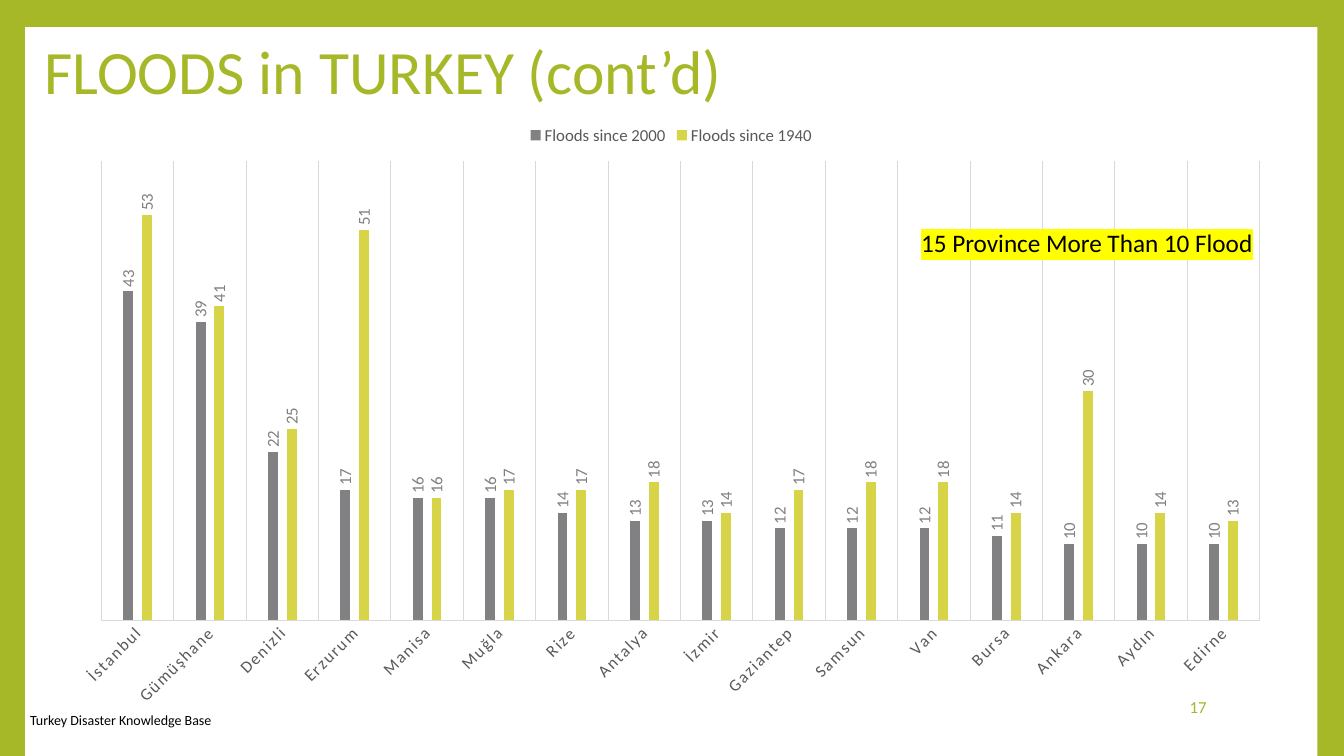
"""Build the slide on floods in Turkish provinces, with a clustered column chart."""
from lxml.etree import SubElement
from pptx import Presentation
from pptx.chart.data import CategoryChartData
from pptx.dml.color import RGBColor
from pptx.enum.chart import XL_CHART_TYPE as ChartType, XL_LABEL_POSITION as LabelPos
from pptx.enum.chart import XL_LEGEND_POSITION as LegendPos, XL_TICK_MARK as TickMark
from pptx.enum.shapes import MSO_SHAPE as Shape
from pptx.enum.text import MSO_ANCHOR as Anchor, PP_ALIGN as Align
from pptx.oxml.ns import qn
from pptx.util import Pt

GREEN = RGBColor(0xA6, 0xB7, 0x27)
WHITE = RGBColor(0xFF, 0xFF, 0xFF)
BLACK = RGBColor(0, 0, 0)
DARK_GREY = RGBColor(0x59, 0x59, 0x59)
LABEL_GREY = RGBColor(0x80, 0x80, 0x80)
LINE_GREY = RGBColor(0xD9, 0xD9, 0xD9)
BAR_GREY = RGBColor(0x81, 0x81, 0x83)
BAR_YELLOW = RGBColor(0xD7, 0xD4, 0x47)
HIGHLIGHT = RGBColor(0xFF, 0xFF, 0x00)

PROVINCES = ["İstanbul", "Gümüşhane", "Denizli", "Erzurum", "Manisa", "Muğla",
             "Rize", "Antalya", "İzmir", "Gaziantep", "Samsun", "Van", "Bursa",
             "Ankara", "Aydın", "Edirne"]
FLOODS = {
    "Floods since 2000": (
        BAR_GREY, [43, 39, 22, 17, 16, 16, 14, 13, 13, 12, 12, 12, 11, 10, 10, 10]),
    "Floods since 1940": (
        BAR_YELLOW, [53, 41, 25, 51, 16, 17, 17, 18, 14, 17, 18, 18, 14, 30, 14, 13]),
}


def style_font(font, size, color):
    font.name, font.size, font.color.rgb = "Calibri", Pt(size), color


def write(box, text, size, color, **frame_format):
    frame = box.text_frame
    for name, value in frame_format.items():
        setattr(frame, name, value)
    paragraph = frame.paragraphs[0]
    run = paragraph.add_run()
    run.text = text
    style_font(run.font, size, color)
    return paragraph


prs = Presentation()
prs.slide_width, prs.slide_height = Pt(960), Pt(540)
slide = prs.slides.add_slide(prs.slide_layouts[5])
slide.background.fill.solid()
slide.background.fill.fore_color.rgb = GREEN

panel = slide.shapes.add_shape(Shape.RECTANGLE, Pt(18), Pt(19.4), Pt(923), Pt(521.3 - 19.4 + 19.4))
panel.shadow.inherit = False
panel.fill.solid()
panel.fill.fore_color.rgb = WHITE
panel.line.fill.background()
slide.shapes._spTree.insert(2, panel._element)

title = slide.shapes.title
title.left, title.top, title.width, title.height = Pt(24.5), Pt(0), Pt(777.6), Pt(106.6)
heading = write(title, "FLOODS in TURKEY (cont’d)", 44, GREEN,
                vertical_anchor=Anchor.MIDDLE, word_wrap=True)
heading.alignment, heading.line_spacing = Align.LEFT, 0.9

page = slide.shapes.add_textbox(Pt(734.4), Pt(490.3), Pt(134.6), Pt(28.8))
write(page, "17", 12, GREEN, vertical_anchor=Anchor.MIDDLE,
      word_wrap=True).alignment = Align.RIGHT

flood_data = CategoryChartData()
flood_data.categories = PROVINCES
for name, (color, counts) in FLOODS.items():
    flood_data.add_series(name, counts)
chart = slide.shapes.add_chart(ChartType.COLUMN_CLUSTERED, Pt(41.8), Pt(81.4),
                               Pt(875.5), Pt(432), flood_data).chart
style_font(chart.font, 10, BLACK)
chart.has_title = False
chart.has_legend = True
chart.legend.position = LegendPos.TOP
chart.legend.include_in_layout = False
style_font(chart.legend.font, 12, DARK_GREY)

plot = chart.plots[0]
plot.gap_width, plot.overlap, plot.vary_by_categories = 444, -90, False
for series, (color, counts) in zip(plot.series, FLOODS.values()):
    series.format.fill.solid()
    series.format.fill.fore_color.rgb = color
    labels = series.data_labels
    labels.show_value, labels.position = True, LabelPos.OUTSIDE_END
    style_font(labels.font, 12, LABEL_GREY)
    labels._element.xpath("c:txPr/a:bodyPr")[0].set("rot", "-5400000")

provinces = chart.category_axis
provinces.major_tick_mark = provinces.minor_tick_mark = TickMark.NONE
provinces.has_major_gridlines = True
for line in (provinces.format.line, provinces.major_gridlines.format.line):
    line.color.rgb, line.width = LINE_GREY, Pt(0.75)
style_font(provinces.tick_labels.font, 12, DARK_GREY)
provinces._element.xpath("c:txPr/a:bodyPr")[0].set("rot", "-2700000")
provinces._element.xpath("c:txPr//a:defRPr")[0].set("spc", "120")

counts_axis = chart.value_axis
counts_axis.minimum_scale, counts_axis.maximum_scale = 0, 60
counts_axis.has_major_gridlines = counts_axis.visible = False

plot_area = chart._chartSpace.xpath("c:chart/c:plotArea")[0]
for old_layout in plot_area.findall(qn("c:layout")):
    plot_area.remove(old_layout)
layout = SubElement(plot_area, qn("c:layout"))
plot_area.insert(0, layout)
manual = SubElement(layout, qn("c:manualLayout"))
for tag, value in {"layoutTarget": "inner", "xMode": "edge", "yMode": "edge",
                   "x": 0.035, "y": 0.078, "w": 0.945, "h": 0.759}.items():
    SubElement(manual, qn(f"c:{tag}")).set("val", str(value))

source = slide.shapes.add_textbox(Pt(14.4), Pt(504.7), Pt(258.5), Pt(19.4))
write(source, "Turkey Disaster Knowledge Base", 10, BLACK, word_wrap=True)

callout = slide.shapes.add_textbox(Pt(650.9), Pt(159.1), Pt(252), Pt(28.8))
remark = write(callout, "15 Province More Than 10 Flood", 18, BLACK, word_wrap=False)
run_format = remark.runs[0].font._element
highlight = SubElement(run_format, qn("a:highlight"))
SubElement(highlight, qn("a:srgbClr")).set("val", str(HIGHLIGHT))
run_format.find(qn("a:solidFill")).addnext(highlight)

prs.save("out.pptx")
